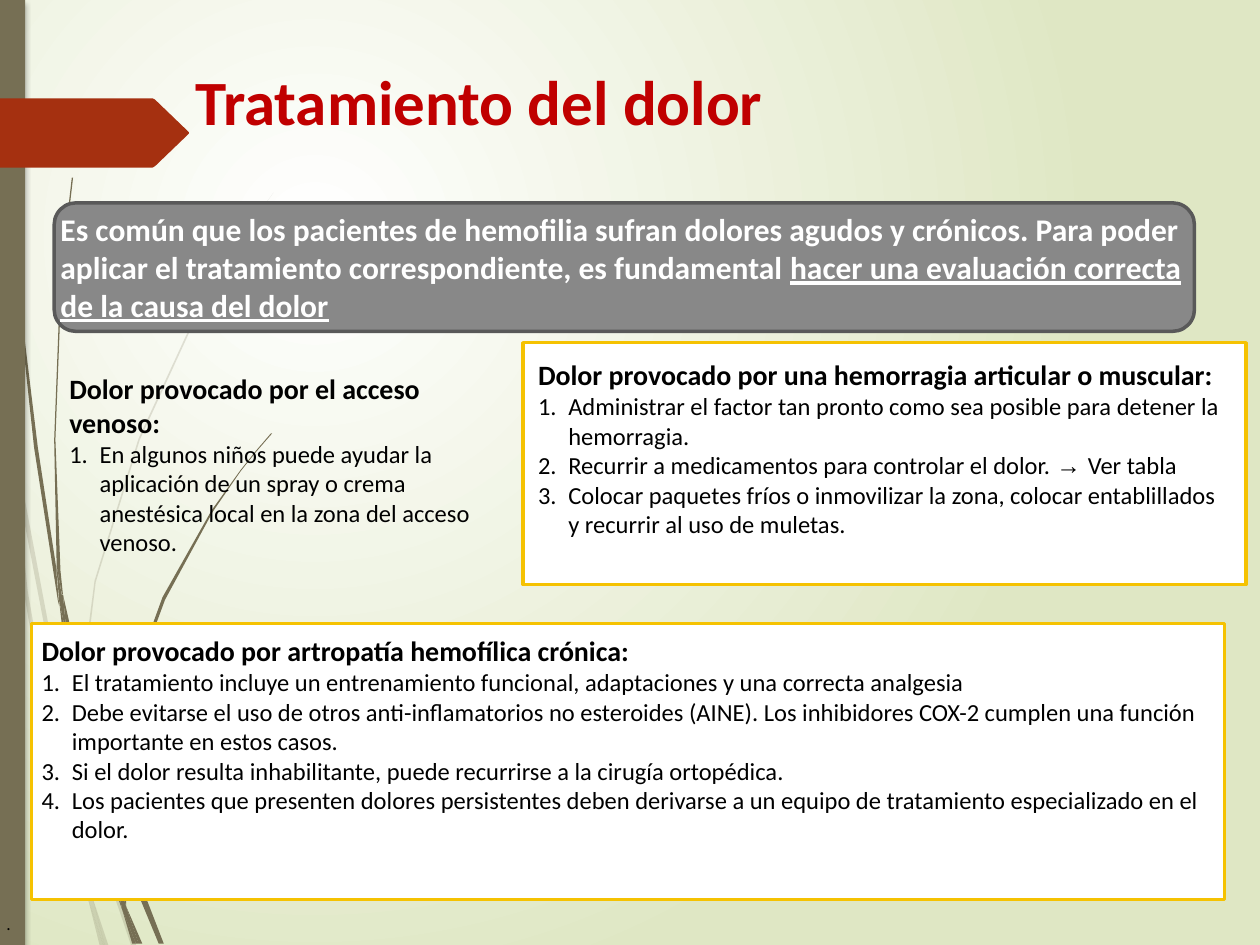
from pptx import Presentation
from pptx.dml.color import RGBColor
from pptx.enum.shapes import MSO_SHAPE as Shape
from pptx.enum.text import MSO_ANCHOR as Anchor, MSO_AUTO_SIZE as AutoSize, PP_ALIGN as Align
from pptx.oxml import parse_xml
from pptx.oxml.ns import nsdecls, qn
from pptx.util import Inches, Pt

COLORS = {
    "white": "FFFFFF", "green": "DFE7C4", "olive": "766F54", "rust": "A53010",
    "red": "C00000", "gold": "F5C201", "gray": "888888", "dark_gray": "595959",
    "black": "000000",
}
FONT = "Calibri"

TITLE = "Tratamiento del dolor"
INTRO = [
    ("Es común que los pacientes de hemofilia sufran dolores agudos y crónicos. "
     "Para poder aplicar el tratamiento correspondiente, es fundamental ", {}),
    ("hacer una evaluación correcta de la causa del dolor", {"underline": True}),
]
# Each list: heading, items, position and size, inset, whether it is a framed panel
LISTS = [
    ("Dolor provocado por el acceso venoso:",
     ["En algunos niños puede ayudar la aplicación de un spray o crema anestésica "
      "local en la zona del acceso venoso."],
     (0.47, 2.87, 3.46, 1.85), 0.08, False),
    ("Dolor provocado por una hemorragia articular o muscular:",
     ["Administrar el factor tan pronto como sea posible para detener la hemorragia.",
      [("Recurrir a medicamentos para controlar el dolor. ", {}),
       ("→ ", {"name": "Arial"}), ("Ver tabla", {})],
      "Colocar paquetes fríos o inmovilizar la zona, colocar entablillados y recurrir "
      "al uso de muletas."],
     (4.15, 2.72, 5.74, 1.92), 0.12, True),
    ("Dolor provocado por artropatía hemofílica crónica:",
     ["El tratamiento incluye un entrenamiento funcional, adaptaciones y una correcta "
      "analgesia",
      "Debe evitarse el uso de otros anti-inflamatorios no esteroides (AINE). Los "
      "inhibidores COX-2 cumplen una función importante en estos casos.",
      "Si el dolor resulta inhabilitante, puede recurrirse a la cirugía ortopédica.",
      "Los pacientes que presenten dolores persistentes deben derivarse a un equipo de "
      "tratamiento especializado en el dolor."],
     (0.25, 4.95, 9.47, 2.15), 0.08, False),
]
CHRONIC_PANEL = (0.25, 4.95, 9.47, 2.19)

# Outlines in hundredths of an inch
FAINT_GRASS = [
    [(8, 350), (6, 322), (0, 282), (0, 299), (7, 344)],
    [(40, 522), (59, 599), (59, 586), (43, 520), (10, 345), (12, 376)],
    [(64, 607), (61, 596), (61, 610), (85, 694), (104, 750), (108, 750), (88, 691)],
    [(83, 750), (86, 750), (73, 711)],
    [(64, 683), (48, 619), (22, 469), (12, 376), (8, 350), (19, 470), (45, 621),
     (64, 693), (70, 714), (69, 707)],
    [(61, 584), (76, 462), (111, 349), (159, 245), (186, 198), (201, 175), (217, 153),
     (201, 175), (186, 197), (158, 244), (110, 348), (75, 461), (59, 584), (59, 586),
     (61, 596)],
    [(70, 714), (79, 750), (82, 750)],
    [(67, 692), (65, 683), (69, 707), (70, 714), (82, 750), (83, 750), (73, 711)],
]
DARK_GRASS = [
    [(5, 110), (14, 233), (27, 355), (46, 477), (47, 481), (45, 457), (45, 453),
     (30, 355), (15, 232), (6, 109), (4, 48), (3, 0), (2, 0), (3, 48)],
    [(73, 592), (88, 645), (88, 633), (88, 631), (77, 590), (50, 472), (53, 505)],
    [(94, 649), (91, 641), (91, 656), (109, 708), (126, 749), (130, 749), (113, 705)],
    [(91, 691), (81, 657), (60, 556), (53, 505), (47, 477), (56, 557), (77, 659),
     (92, 708), (97, 722), (96, 717)],
    [(50, 472), (48, 453), (44, 349), (48, 245), (52, 193), (58, 141), (57, 141),
     (51, 193), (47, 245), (43, 349), (45, 449), (49, 471)],
    [(110, 749), (113, 749), (100, 719)],
    [(47, 477), (53, 505), (50, 472), (49, 472), (45, 449), (45, 453)],
    [(91, 633), (103, 552), (131, 476), (169, 406), (191, 374), (203, 359), (216, 344),
     (215, 344), (203, 358), (191, 373), (168, 405), (129, 474), (101, 551), (88, 631),
     (91, 641)],
    [(97, 722), (105, 749), (108, 749)],
    [(88, 645), (91, 691), (96, 706), (100, 719), (100, 715), (91, 656), (90, 651)],
    [(96, 706), (91, 691), (96, 717), (97, 722), (108, 749), (110, 749), (100, 719)],
]
TITLE_ARROW = [(149, 107), (123, 132), (121, 133), (0, 133), (0, 78), (121, 78),
               (123, 79), (149, 104), (150, 105), (150, 106)]


def rgb(name):
    return RGBColor.from_string(COLORS[name])


def inches(box):
    return [Inches(value) for value in box]


def paint(shape, fill, line=None):
    shape.fill.solid()
    shape.fill.fore_color.rgb = rgb(fill)
    if line:
        shape.line.color.rgb = rgb(line)
        shape.line.width = Pt(2)
    else:
        shape.line.fill.background()


def add_shape(kind, box, fill, line=None):
    shape = slide.shapes.add_shape(kind, *inches(box))
    shape.shadow.inherit = False
    paint(shape, fill, line)
    return shape


def add_outline(points, fill, opacity=100):
    builder = slide.shapes.build_freeform(*points[0], scale=Inches(0.01))
    builder.add_line_segments(points[1:], close=True)
    shape = builder.convert_to_shape()
    shape.shadow.inherit = False
    paint(shape, fill)
    if opacity < 100:
        color = shape.element.spPr.find(".//" + qn("a:srgbClr"))
        color.append(parse_xml(f'<a:alpha {nsdecls("a")} val="{opacity * 1000}"/>'))


def place(box, position, inset, anchor=Anchor.TOP):
    """Bring a text holder to the front, set its place and return its text frame."""
    tree.append(box.element)
    box.left, box.top, box.width, box.height = inches(position)
    frame = box.text_frame
    frame.word_wrap = True
    frame.auto_size = AutoSize.NONE
    frame.vertical_anchor = anchor
    frame.margin_left = frame.margin_right = Inches(inset)
    frame.margin_top = frame.margin_bottom = Inches(inset)
    return frame


def write(para, content, size, color="black", bold=False, numbered=False):
    """Fill a paragraph with a string or with (text, font settings) runs."""
    para.alignment = Align.LEFT
    para.space_before = para.space_after = Pt(0)
    para.line_spacing = 1.0
    font = para.font
    font.name, font.size, font.bold = FONT, Pt(size), bold
    font.color.rgb = rgb(color)
    for text, settings in [(content, {})] if isinstance(content, str) else content:
        span = para.add_run()
        span.text = text
        for name, value in settings.items():
            setattr(span.font, name, value)
    props = para._p.get_or_add_pPr()
    indent = Inches(0.24) if numbered else 0
    props.set("marL", str(indent))
    props.set("indent", str(-indent))
    bullet = 'buAutoNum {} type="arabicPeriod"' if numbered else "buNone {}"
    props.find(qn("a:defRPr")).addprevious(parse_xml(f'<a:{bullet.format(nsdecls("a"))}/>'))


deck = Presentation()
deck.slide_width, deck.slide_height = Inches(10), Inches(7.5)
slide = deck.slides.add_slide(deck.slide_layouts.get_by_name("Comparison"))
title, *bodies = slide.placeholders
tree = title.element.getparent()

background = slide.background.fill
background.gradient()
for stop, name in zip(background.gradient_stops, ("white", "green")):
    stop.color.rgb = rgb(name)
linear = slide.element.find(".//" + qn("a:lin"))
linear.getparent().replace(linear, parse_xml(
    f'<a:path {nsdecls("a")} path="circle">'
    '<a:fillToRect l="25000" t="25000" r="75000" b="75000"/></a:path>'))

for blade in FAINT_GRASS:
    add_outline(blade, "olive", 20)
for blade in DARK_GRASS:
    add_outline(blade, "olive")
side_bar = add_shape(Shape.RECTANGLE, (0, 0, 0.2, 7.5), "olive")
side_bar.element.spPr.find(qn("a:effectLst")).append(parse_xml(
    f'<a:outerShdw {nsdecls("a")} blurRad="{Pt(3)}" dist="{Pt(2)}" dir="5400000">'
    f'<a:srgbClr val="{COLORS["black"]}"><a:alpha val="25000"/></a:srgbClr></a:outerShdw>'))
add_outline(TITLE_ARROW, "rust")

frame = place(title, (0.5, 0.21, 9.07, 1.18), 0.05, Anchor.MIDDLE)
frame.margin_left = Inches(1.05)
write(frame.paragraphs[0], TITLE, 36, "red", bold=True)

intro_panel = add_shape(Shape.ROUNDED_RECTANGLE, (0.43, 1.61, 9.05, 1.02), "gray", "dark_gray")
intro_panel.adjustments[0] = 0.17
frame = place(bodies[3], (0.48, 1.67, 8.95, 0.9), 0, Anchor.MIDDLE)
write(frame.paragraphs[0], INTRO, 18, "white", bold=True)

add_shape(Shape.RECTANGLE, CHRONIC_PANEL, "white", "gold")
for body, (heading, items, position, inset, framed) in zip(bodies, LISTS):
    frame = place(body, position, inset)
    if framed:
        paint(body, "white", "gold")
    write(frame.paragraphs[0], heading, 16, bold=True)
    for item in items:
        write(frame.add_paragraph(), item, 14, numbered=True)

footer = slide.shapes.add_textbox(0, 0, 0, 0)
frame = place(footer, (0, 7.2, 8.89, 0.26), 0.05)
write(frame.paragraphs[0], ".", 10)

deck.save("out.pptx")
